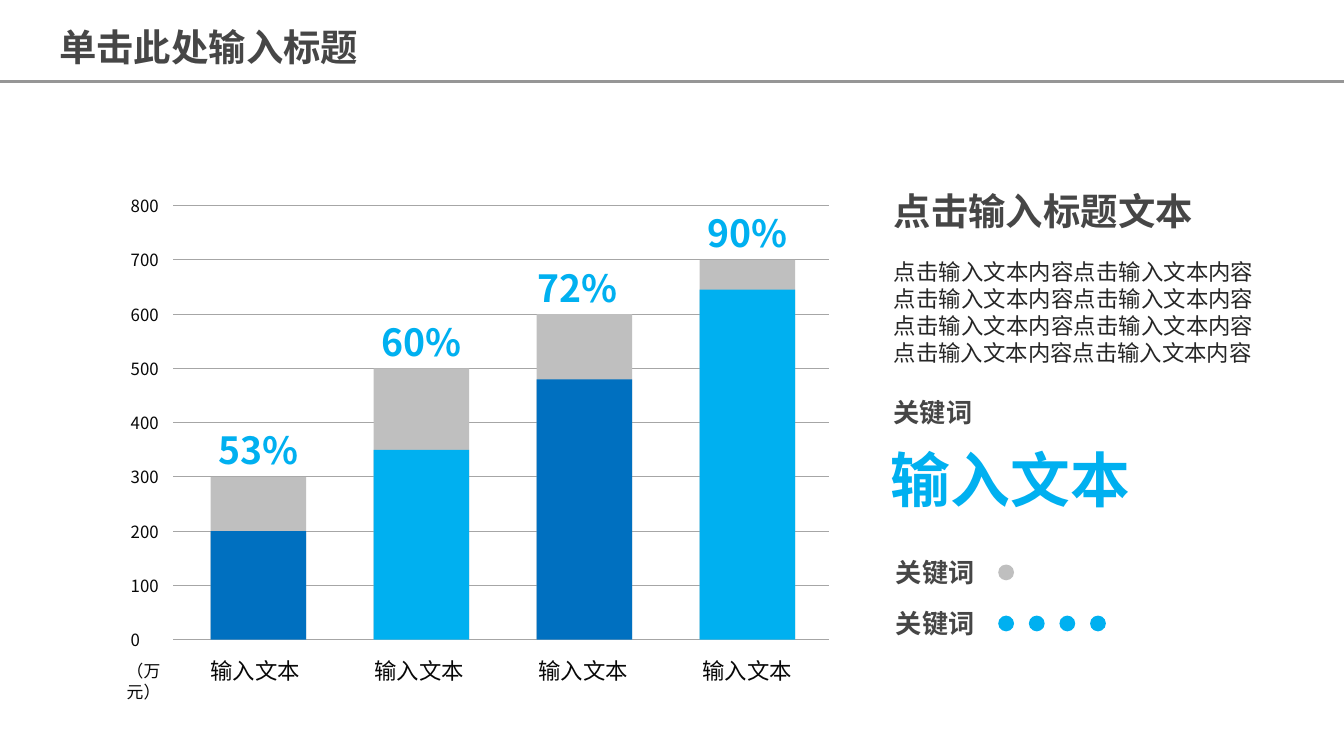
from pptx import Presentation
from pptx import util as u
from pptx.dml.color import RGBColor
from pptx.enum import shapes, text
from pptx.oxml.ns import qn
from lxml import etree

FONT = "Noto Sans CJK SC"
INK, DARK, BODY = "080808", "464646", "262626"
SKY, BLUE, GREY, GRID, RULE = "00B0F0", "0070C0", "BFBFBF", "A6A6A6", "969696"
WIDTH = 10
HEIGHT = WIDTH * 9 / 16
TOP_VALUE, STEP = 800, 100
BARS = [("53%", 300, 200, BLUE, 0.01), ("60%", 500, 350, SKY, 0.01),
        ("72%", 600, 480, BLUE, 0), ("90%", 700, 645, SKY, 0.01)]
ALIGN = text.PP_ALIGN
SHAPE = shapes.MSO_SHAPE


def rgb(value):
    return RGBColor.from_string(value)


def part(box, x, y, w, h):
    left, top, width, height = box
    return left + x * width, top + y * height, w * width, h * height


def inches(box):
    return [u.Inches(v) for v in box]


def add_run(p, words, size, color, bold=False):
    r = p.add_run()
    r.text = words
    r.font.name, r.font.size, r.font.bold = FONT, u.Pt(size), bold
    r.font.color.rgb = rgb(color)
    latin = r.font._element.find(qn("a:latin"))
    latin.addnext(latin.makeelement(qn("a:ea"), {"typeface": FONT}))


def add_text(slide, box, words, size, color, bold=False, align=ALIGN.LEFT,
             inset=(0, 0), wrap=True):
    tf = slide.shapes.add_textbox(*inches(box)).text_frame
    tf.word_wrap = wrap
    tf.margin_left = tf.margin_right = u.Inches(inset[0])
    tf.margin_top = tf.margin_bottom = u.Inches(inset[1])
    p = tf.paragraphs[0]
    p.alignment = align
    add_run(p, words, size, color, bold)


def add_solid(slide, kind, box, color):
    sp = slide.shapes.add_shape(kind, *inches(box))
    sp.shadow.inherit = False
    sp.fill.solid()
    sp.fill.fore_color.rgb = rgb(color)
    sp.line.fill.background()


def add_rule(parent, left, top, width, color, weight):
    rule = parent.shapes.add_connector(
        shapes.MSO_CONNECTOR.STRAIGHT, *inches((left, top, left + width, top)))
    rule.line.color.rgb = rgb(color)
    rule.line.width = u.Pt(weight)
    etree.SubElement(rule._element.spPr, qn("a:effectLst"))


def header(slide, box):
    left, top, width, height = box
    add_rule(slide, left, top + height, width, RULE, 1.75)
    title = slide.shapes.title
    title.left, title.top, title.width, title.height = inches(
        part(box, 0.034, 0.1, 0.26, 0.82))
    tf = title.text_frame
    tf.auto_size = text.MSO_AUTO_SIZE.NONE
    tf.vertical_anchor = text.MSO_ANCHOR.TOP
    p = tf.paragraphs[0]
    p.alignment, p.line_spacing = ALIGN.LEFT, 1.2
    add_run(p, "单击此处输入标题", 20, DARK, True)


def value_grid(slide, box):
    group = slide.shapes.add_group_shape()
    for value in range(0, TOP_VALUE + STEP, STEP):
        level = 1 - value / TOP_VALUE
        left, top, width, _ = part(box, 0, level, 1, 0)
        add_rule(group, left, top, width, GRID, 0.5)
        add_text(slide, part(box, -0.065, level - 0.023, 0.05, 0.046), str(value),
                 9, INK, align=ALIGN.JUSTIFY)
    add_text(slide, part(box, -0.105, 1.034, 0.119, 0.077), "（万元）", 9, INK,
             align=ALIGN.CENTER, inset=(0.1, 0.05))


def progress_bars(slide, box):
    value_grid(slide, box)
    for i, (percent, total, done, color, shift) in enumerate(BARS):
        x = 0.057 + 0.2485 * i
        for value, fill in ((total, GREY), (done, color)):
            share = value / TOP_VALUE
            add_solid(slide, SHAPE.RECTANGLE, part(box, x, 1 - share, 0.1455, share), fill)
        add_text(slide, part(box, x + shift, 0.886 - total / TOP_VALUE, 0.125, 0.105),
                 percent, 20, SKY, True, ALIGN.CENTER, wrap=False)
        add_text(slide, part(box, 0.0143 + 0.25 * i, 1.025, 0.221, 0.093), "输入文本",
                 12, INK, align=ALIGN.CENTER, inset=(0.1, 0.05))


def key_row(slide, box, color, count):
    add_text(slide, part(box, 0, 0, 0.26, 1), "关键词", 14, DARK, True)
    for i in range(count):
        x, y, _, size = part(box, 0.284 + 0.085 * i, 0.25, 0, 0.5)
        add_solid(slide, SHAPE.OVAL, (x, y, size, size), color)


def side_panel(slide, box):
    add_text(slide, part(box, 0, 0, 0.84, 0.1), "点击输入标题文本", 20, DARK, True)
    add_text(slide, part(box, 0, 0.155, 1, 0.24), "点击输入文本内容" * 8, 12, BODY,
             align=ALIGN.JUSTIFY)
    add_text(slide, part(box, 0, 0.461, 0.59, 0.07), "关键词", 14, DARK, True)
    add_text(slide, part(box, -0.008, 0.565, 0.93, 0.16), "输入文本", 32, SKY, True)
    for row, (color, count) in enumerate(((GREY, 1), (SKY, 4))):
        key_row(slide, part(box, 0.006, 0.816 + 0.113 * row, 1, 0.07), color, count)


def main():
    prs = Presentation()
    prs.slide_width, prs.slide_height = u.Inches(WIDTH), u.Inches(HEIGHT)
    slide = prs.slides.add_slide(prs.slide_layouts[5])
    page = (0, 0, WIDTH, HEIGHT)
    header(slide, part(page, 0, 0, 1, 0.108))
    progress_bars(slide, (1.29, 1.53, 4.88, 3.23))
    side_panel(slide, (6.65, 1.4, 2.68, 3.36))
    prs.save("out.pptx")


if __name__ == "__main__":
    main()
